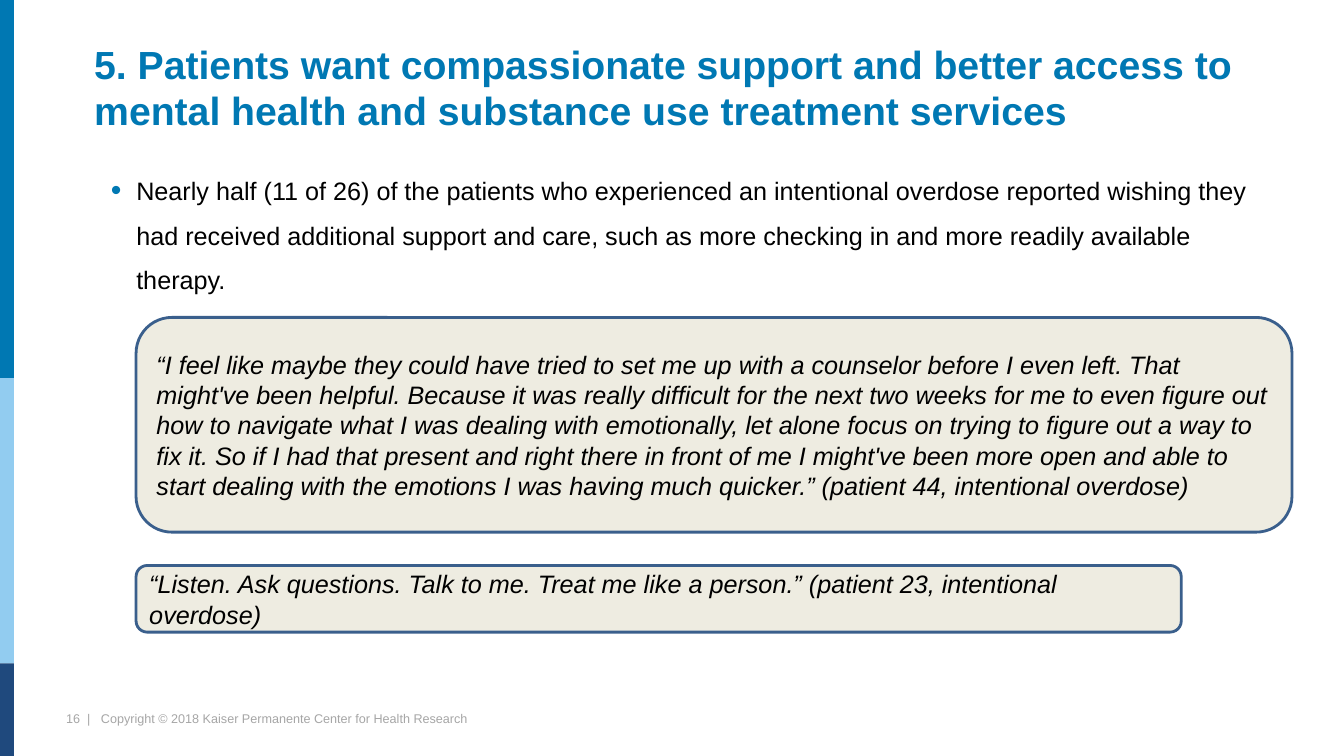
from lxml.etree import SubElement
from pptx import Presentation
from pptx.dml.color import RGBColor
from pptx.enum.shapes import MSO_SHAPE
from pptx.enum.text import MSO_ANCHOR, MSO_AUTO_SIZE, PP_ALIGN
from pptx.oxml.ns import qn
from pptx.util import Cm, Pt

COLORS = {
    "blue": "0078B3",
    "sky": "92CCF0",
    "navy": "1F497D",
    "outline": "3A5F8C",
    "cream": "EEECE1",
    "black": "000000",
    "grey": "A6A6A6",
}
SLIDE_HEIGHT = 19.05
BAR_WIDTH = 0.35
QUOTE_LEFT = 3.43

TITLE = (
    "5. Patients want compassionate support and better access to "
    "mental health and substance use treatment services"
)
FINDING = (
    "Nearly half (11 of 26) of the patients who experienced an intentional "
    "overdose reported wishing they had received additional support and care, "
    "such as more checking in and more readily available therapy."
)
COUNSELOR_QUOTE = (
    "“I feel like maybe they could have tried to set me up with a counselor "
    "before I even left. That might've been helpful. Because it was really "
    "difficult for the next two weeks for me to even figure out how to navigate "
    "what I was dealing with emotionally, let alone focus on trying to figure "
    "out a way to fix it. So if I had that present and right there in front of "
    "me I might've been more open and able to start dealing with the emotions I "
    "was having much quicker.” (patient 44, intentional overdose)"
)
LISTEN_QUOTE = (
    "“Listen. Ask questions. Talk to me. Treat me like a person.” "
    "(patient 23, intentional overdose)"
)
FOOTER = "16  |   Copyright © 2018 Kaiser Permanente Center for Health Research"


def color(name):
    return RGBColor.from_string(COLORS[name])


def place(shape, left, top, width, height):
    shape.left, shape.top = Cm(left), Cm(top)
    shape.width, shape.height = Cm(width), Cm(height)


def write_text(shape, text, size, color_name, bold=False, italic=False):
    text_frame = shape.text_frame
    text_frame.text = text
    paragraph = text_frame.paragraphs[0]
    paragraph.alignment = PP_ALIGN.LEFT
    paragraph.space_before = Pt(0)
    for run in paragraph.runs:
        run.font.name = "Arial"
        run.font.size = Pt(size)
        run.font.bold = bold
        run.font.italic = italic
        run.font.color.rgb = color(color_name)
    return paragraph


def add_bullet(paragraph):
    properties = paragraph._p.get_or_add_pPr()
    properties.set("marL", str(Cm(0.64)))
    properties.set("indent", str(-Cm(0.64)))
    bullet_color = SubElement(properties, qn("a:buClr"))
    SubElement(bullet_color, qn("a:srgbClr"), val=COLORS["blue"])
    SubElement(properties, qn("a:buSzPct"), val="120000")
    SubElement(properties, qn("a:buFont"), typeface="Arial")
    SubElement(properties, qn("a:buChar"), char="•")


def add_filled_shape(slide, kind, box, fill_name):
    shape = slide.shapes.add_shape(kind, *(Cm(length) for length in box))
    shape.shadow.inherit = False
    shape.fill.solid()
    shape.fill.fore_color.rgb = color(fill_name)
    return shape


def add_side_bars(slide):
    top = 0
    for fill_name, bottom in (("blue", 9.53), ("sky", 16.72), ("navy", SLIDE_HEIGHT)):
        box = (0, top, BAR_WIDTH, bottom - top)
        bar = add_filled_shape(slide, MSO_SHAPE.RECTANGLE, box, fill_name)
        bar.line.fill.background()
        top = bottom


def add_footer(slide):
    footer = slide.shapes.add_textbox(Cm(1.42), Cm(17.78), Cm(10.74), Cm(0.64))
    write_text(footer, FOOTER, 9, "grey")
    footer.text_frame.word_wrap = False


def fill_title(slide):
    title = slide.shapes.title
    place(title, 2.12, 2.12, 29.63, 2.54)
    paragraph = write_text(title, TITLE, 28, "blue", bold=True)
    paragraph.line_spacing = Pt(33)
    text_frame = title.text_frame
    text_frame.auto_size = MSO_AUTO_SIZE.NONE
    text_frame.vertical_anchor = MSO_ANCHOR.BOTTOM
    text_frame.margin_bottom = Cm(1.29)


def fill_body(slide):
    body = slide.placeholders[1]
    place(body, 2.54, 3.92, 29.63, 12.07)
    paragraph = write_text(body, FINDING, 18, "black")
    add_bullet(paragraph)
    paragraph.line_spacing = Pt(32)
    paragraph.space_after = Pt(5)
    body.text_frame.auto_size = MSO_AUTO_SIZE.NONE


def add_quote(slide, text, top, width, height):
    box = (QUOTE_LEFT, top, width, height)
    quote = add_filled_shape(slide, MSO_SHAPE.ROUNDED_RECTANGLE, box, "cream")
    quote.line.color.rgb = color("outline")
    quote.line.width = Pt(2)
    write_text(quote, text, 18, "black", italic=True)
    quote.text_frame.word_wrap = True
    quote.text_frame.vertical_anchor = MSO_ANCHOR.MIDDLE


def main():
    presentation = Presentation()
    presentation.slide_width = Cm(33.87)
    presentation.slide_height = Cm(SLIDE_HEIGHT)
    slide = presentation.slides.add_slide(presentation.slide_layouts[1])
    add_footer(slide)
    add_side_bars(slide)
    fill_title(slide)
    fill_body(slide)
    add_quote(slide, COUNSELOR_QUOTE, 8, 29.13, 5.41)
    add_quote(slide, LISTEN_QUOTE, 14.25, 26.34, 1.68)
    presentation.save("out.pptx")


if __name__ == "__main__":
    main()
